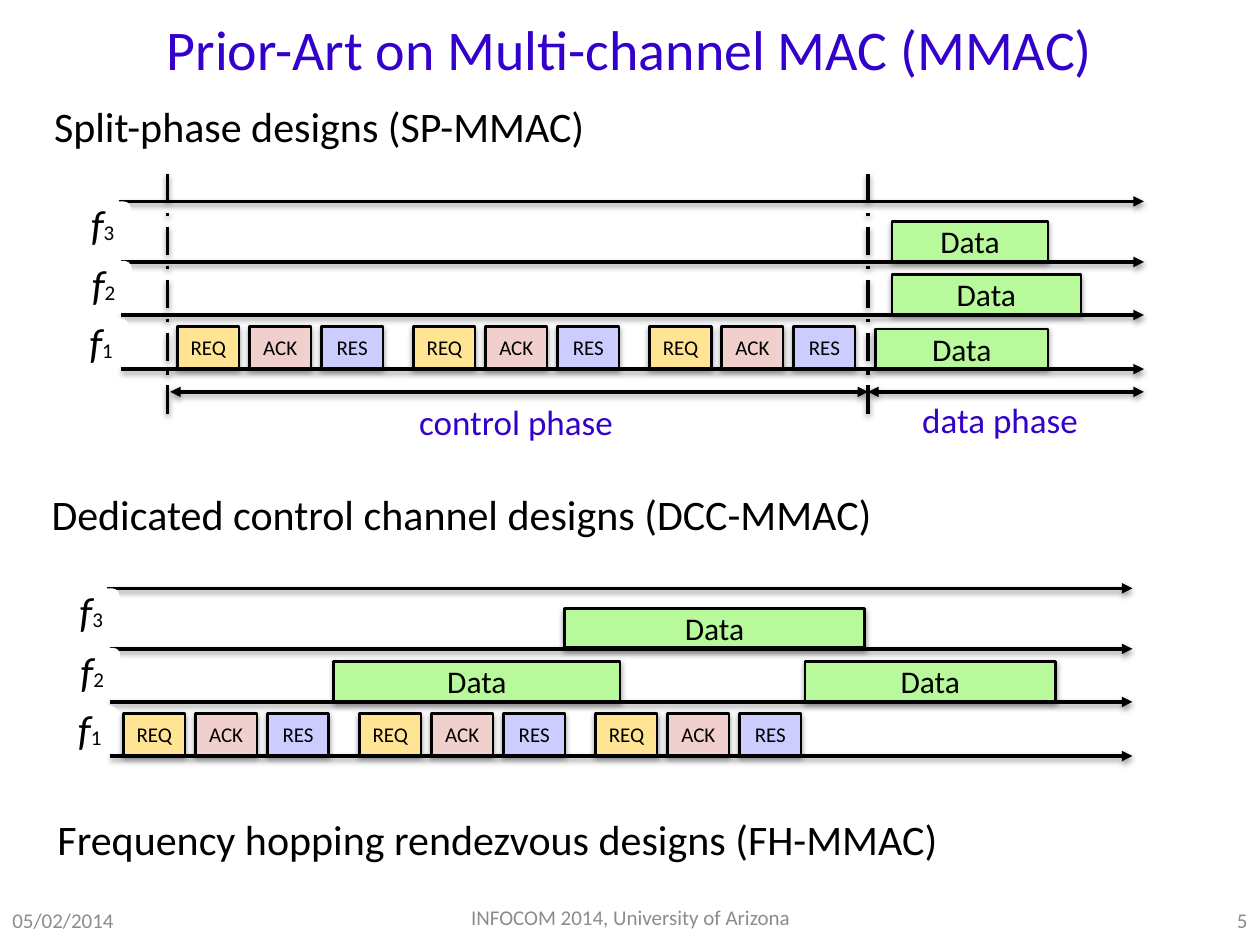
"""Build the slide on prior multi-channel MAC designs."""
from pptx import Presentation
from pptx.dml.color import RGBColor
from pptx.enum.dml import MSO_LINE
from pptx.enum.shapes import MSO_CONNECTOR, MSO_SHAPE
from pptx.enum.text import MSO_ANCHOR, MSO_AUTO_SIZE, PP_ALIGN
from pptx.oxml import parse_xml
from pptx.oxml.ns import nsdecls
from pptx.util import Cm, Pt

FONT = "Calibri"
BLACK, BLUE, GRAY, WHITE = "000000", "3300CC", "8C8C8C", "FFFFFF"
GREEN = "B8F99C"
PACKETS = [("REQ", "FFE593"), ("ACK", "F1CFCC"), ("RES", "CDCCFE")]
SHADOW = (
    f'<a:effectLst {nsdecls("a")}>'
    '<a:outerShdw blurRad="40000" dist="20000" dir="5400000" rotWithShape="0">'
    '<a:srgbClr val="000000"><a:alpha val="38000"/></a:srgbClr>'
    '</a:outerShdw></a:effectLst>'
)

presentation = Presentation()
presentation.slide_width = Cm(25.4)
presentation.slide_height = Cm(19.05)
slide = presentation.slides.add_slide(presentation.slide_layouts[5])


def add_line(x1, y1, x2, y2, ends=(), dash=None):
    line = slide.shapes.add_connector(
        MSO_CONNECTOR.STRAIGHT, Cm(x1), Cm(y1), Cm(x2), Cm(y2))
    line.line.color.rgb = RGBColor.from_string(BLACK)
    line.line.width = Pt(2)
    if dash:
        line.line.dash_style = dash
    for end in ends:
        line.line._get_or_add_ln().append(
            parse_xml(f'<a:{end} {nsdecls("a")} type="triangle"/>'))
    line._element.spPr.append(parse_xml(SHADOW))


def add_box(left, top, width, height, fill, runs, outlined=True):
    kind = MSO_SHAPE.RECTANGLE if outlined else MSO_SHAPE.ROUNDED_RECTANGLE
    shape = slide.shapes.add_shape(kind, Cm(left), Cm(top), Cm(width), Cm(height))
    shape.fill.solid()
    shape.fill.fore_color.rgb = RGBColor.from_string(fill)
    if outlined:
        shape.line.color.rgb = RGBColor.from_string(BLACK)
        shape.line.width = Pt(1.5)
        shape._element.spPr.append(parse_xml(SHADOW))
    else:
        shape.line.fill.background()
        shape.shadow.inherit = False
    text_frame = shape.text_frame
    text_frame.word_wrap = False
    text_frame.vertical_anchor = MSO_ANCHOR.MIDDLE
    paragraph = text_frame.paragraphs[0]
    paragraph.alignment = PP_ALIGN.CENTER
    for text, size, italic in runs:
        run = paragraph.add_run()
        run.text = text
        run.font.name = FONT
        run.font.size = Pt(size)
        run.font.italic = italic
        run.font.color.rgb = RGBColor.from_string(BLACK)


title = slide.shapes.title
title.left, title.top, title.width, title.height = Cm(0), Cm(0.05), Cm(25.4), Cm(1.85)
title.text_frame.text = "Prior-Art on Multi-channel MAC (MMAC)"
title.text_frame.vertical_anchor = MSO_ANCHOR.MIDDLE
title_paragraph = title.text_frame.paragraphs[0]
title_paragraph.alignment = PP_ALIGN.CENTER
title_font = title_paragraph.runs[0].font
title_font.name = FONT
title_font.size = Pt(32)
title_font.color.rgb = RGBColor.from_string(BLUE)

LEFT, CENTER, RIGHT = PP_ALIGN.LEFT, PP_ALIGN.CENTER, PP_ALIGN.RIGHT
TOP, MIDDLE = MSO_ANCHOR.TOP, MSO_ANCHOR.MIDDLE
texts = [
    ("05/02/2014", 0, 18.03, 5.92, 1.02, 12, GRAY, LEFT, MIDDLE),
    ("INFOCOM 2014, University of Arizona", 8.69, 17.98, 8.05, 1.02, 12, GRAY, CENTER, MIDDLE),
    ("5", 19.48, 18.03, 5.92, 1.02, 12, GRAY, RIGHT, MIDDLE),
    ("Split-phase designs (SP-MMAC)", 0.84, 1.9, 11.35, 1.27, 24, BLACK, LEFT, TOP),
    ("Dedicated control channel designs (DCC-MMAC)", 0.79, 9.73, 17.2, 1.27, 24, BLACK, LEFT, TOP),
    ("Frequency hopping rendezvous designs (FH-MMAC)", 0.91, 16.28, 18.44, 1.27, 24, BLACK, LEFT, TOP),
    ("control phase", 8.2, 7.95, 4.9, 1.12, 20, BLUE, LEFT, TOP),
    ("data phase", 18.34, 7.9, 3.89, 1.12, 20, BLUE, LEFT, TOP),
]
for text, left, top, width, height, size, color, alignment, anchor in texts:
    text_box = slide.shapes.add_textbox(Cm(left), Cm(top), Cm(width), Cm(height))
    text_frame = text_box.text_frame
    text_frame.text = text
    text_frame.word_wrap = size != 24
    text_frame.vertical_anchor = anchor
    if anchor == TOP:
        text_frame.auto_size = MSO_AUTO_SIZE.SHAPE_TO_FIT_TEXT
    paragraph = text_frame.paragraphs[0]
    paragraph.alignment = alignment
    font = paragraph.runs[0].font
    font.name = FONT
    font.size = Pt(size)
    font.color.rgb = RGBColor.from_string(color)

control_start, control_end, axis_end = 3.38, 17.5, 23.06
for x in (control_start, control_end):
    add_line(x, 3.51, x, 8.38, dash=MSO_LINE.LONG_DASH_DOT)
for start, end in ((control_start + 0.05, control_end), (control_end, axis_end)):
    add_line(start, 7.9, end, 7.9, ends=("headEnd", "tailEnd"))

axes = [(2.39, 4.06), (2.44, 5.28), (2.44, 6.35), (2.44, 7.44)]
channels = [("1", 1.47, 6.43), ("2", 1.52, 5.26), ("3", 1.5, 4.06)]
split_phase_data = [(17.98, 4.47, 3.15), (17.98, 5.54, 3.81), (17.65, 6.63, 3.48)]
dedicated_data = [(11.38, 4.47, 6.05), (6.73, 5.54, 5.77), (16.23, 5.54, 5.05)]
diagrams = [
    (0, 0, 3.58, split_phase_data),
    (-0.23, 7.8, 2.49, dedicated_data),
]
for shift_x, shift_y, first_packet, data_blocks in diagrams:
    for start, y in axes:
        add_line(start + shift_x, y + shift_y, axis_end + shift_x, y + shift_y,
                 ends=("tailEnd",))
    for handshake in range(3):
        for position, (name, fill) in enumerate(PACKETS):
            left = first_packet + handshake * 4.76 + position * 1.45
            add_box(left, 6.58 + shift_y, 1.24, 0.84, fill, [(name, 12, False)])
    for left, top, width in data_blocks:
        add_box(left, top + shift_y, width, 0.79, GREEN, [("Data", 18, False)])
    for number, left, top in channels:
        add_box(left + shift_x, top + shift_y, 1.14, 0.91, WHITE,
                [("f", 24, True), (number, 12, False)], outlined=False)

presentation.save("out.pptx")
